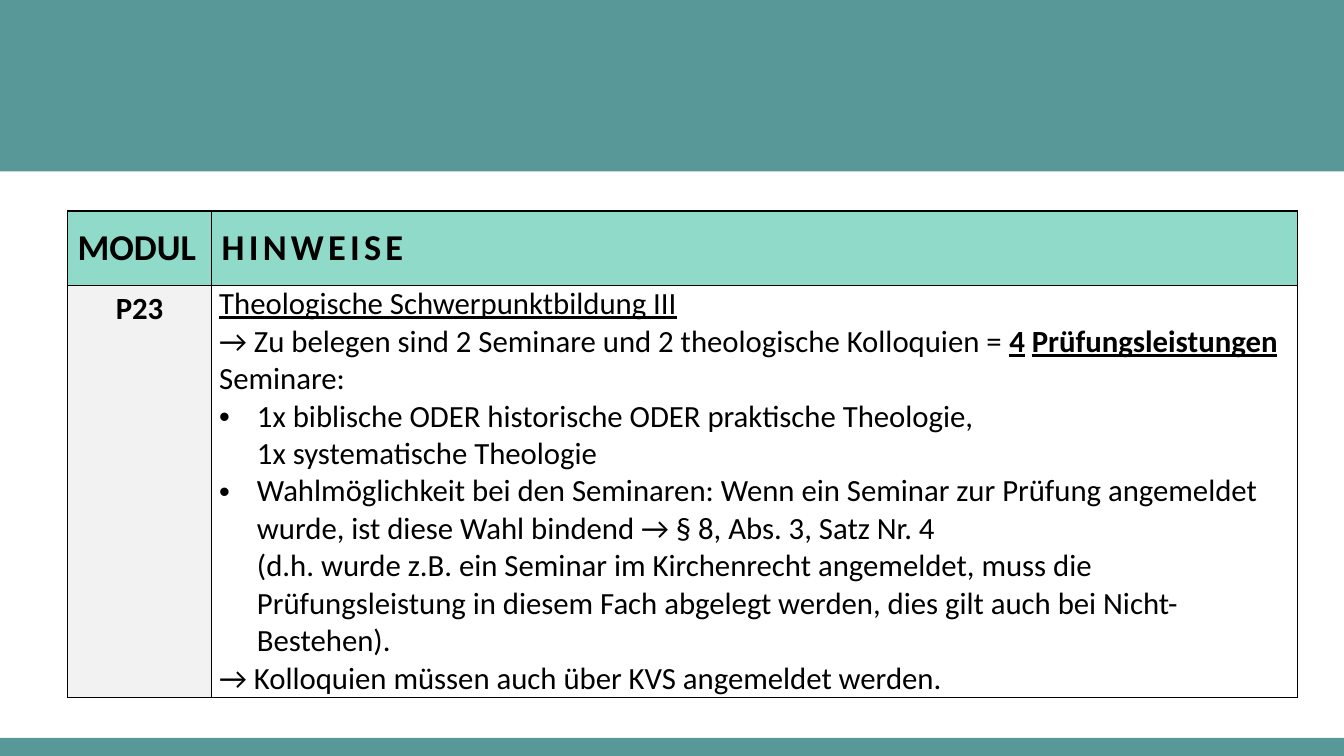
"""Build the slide with the notes on module P23."""
from dataclasses import dataclass

import lxml.etree
import pptx
import pptx.dml.color
import pptx.enum.shapes
import pptx.enum.text
import pptx.oxml.ns
import pptx.util

Pt = pptx.util.Pt
qn = pptx.oxml.ns.qn
MIDDLE = pptx.enum.text.MSO_ANCHOR.MIDDLE
TOP = pptx.enum.text.MSO_ANCHOR.TOP
SLIDE_WIDTH, SLIDE_HEIGHT = 960, 540
TEAL, MINT, GREY, WHITE, BLACK = "589898", "8FDAC8", "F2F2F2", "FFFFFF", "000000"
INDENT = 27


@dataclass
class Band:
    top: float
    height: float


@dataclass
class Run:
    text: str
    bold: bool = False
    underline: bool = False
    spacing: float = 0


@dataclass
class Paragraph:
    runs: list[Run]
    bullet: bool = False
    centered: bool = False


@dataclass
class Cell:
    fill: str
    paragraphs: list[Paragraph]
    size: float = 22
    anchor: pptx.enum.text.MSO_ANCHOR = TOP
    side_margin: float = 7.2
    end_margin: float = 3.6


BANDS = [Band(0, 122.4), Band(527.1, 12.9)]
COLUMN_WIDTHS = [103, 775.8]
ROW_HEIGHTS = [53.2, 294.5]
NOTES = [
    Paragraph([Run("Theologische Schwerpunktbildung III", underline=True)]),
    Paragraph([
        Run("→ Zu belegen sind 2 Seminare und 2 theologische Kolloquien = "),
        Run("4", bold=True, underline=True),
        Run(" "),
        Run("Prüfungsleistungen", bold=True, underline=True),
    ]),
    Paragraph([Run("Seminare:")]),
    Paragraph([Run("1x biblische ODER historische ODER praktische Theologie,\n"
                   "1x systematische Theologie")], bullet=True),
    Paragraph([Run("Wahlmöglichkeit bei den Seminaren: Wenn ein Seminar zur Prüfung "
                   "angemeldet wurde, ist diese Wahl bindend → § 8, Abs. 3, Satz Nr. 4\n"
                   "(d.h. wurde z.B. ein Seminar im Kirchenrecht angemeldet, muss die "
                   "Prüfungsleistung in diesem Fach abgelegt werden, dies gilt auch bei "
                   "Nicht-Bestehen).")], bullet=True),
    Paragraph([Run("→ Kolloquien müssen auch über KVS angemeldet werden.")]),
]
ROWS = [
    [Cell(MINT, [Paragraph([Run("MODUL", bold=True)])], 26, MIDDLE),
     Cell(MINT, [Paragraph([Run("HINWEISE", bold=True, spacing=3)])], 26, MIDDLE)],
    [Cell(GREY, [Paragraph([Run("P23", bold=True)], centered=True)]),
     Cell(WHITE, NOTES, side_margin=5.4, end_margin=0)],
]


def color(value: str) -> pptx.dml.color.RGBColor:
    """Turn a hex string into a colour."""
    return pptx.dml.color.RGBColor.from_string(value)


def draw_band(slide, band: Band) -> None:
    """Draw a full-width band."""
    shape = slide.shapes.add_shape(pptx.enum.shapes.MSO_SHAPE.RECTANGLE,
                                   0, Pt(band.top), Pt(SLIDE_WIDTH), Pt(band.height))
    shape.shadow.inherit = False
    shape.fill.solid()
    shape.fill.fore_color.rgb = color(TEAL)
    shape.line.fill.background()


def add_borders(table_cell) -> None:
    """Give a cell thin black lines on its four sides."""
    properties = table_cell._tc.get_or_add_tcPr()
    for side in ("lnL", "lnR", "lnT", "lnB"):
        line = lxml.etree.SubElement(properties, qn(f"a:{side}"), w=str(Pt(1)))
        fill = lxml.etree.SubElement(line, qn("a:solidFill"))
        lxml.etree.SubElement(fill, qn("a:srgbClr"), val=BLACK)


def add_bullet(paragraph) -> None:
    """Give a paragraph a hanging bullet."""
    properties = paragraph._p.get_or_add_pPr()
    properties.set("marL", str(Pt(INDENT)))
    properties.set("indent", str(-Pt(INDENT)))
    lxml.etree.SubElement(properties, qn("a:buFont"), typeface="Arial")
    lxml.etree.SubElement(properties, qn("a:buChar"), char="•")


def add_run(paragraph, content: Run, size: float) -> None:
    """Add a run, with a line break at each newline."""
    for index, line in enumerate(content.text.split("\n")):
        if index:
            paragraph.add_line_break()
        run = paragraph.add_run()
        run.text = line
        run.font.name = "Calibri"
        run.font.size = Pt(size)
        run.font.bold = content.bold
        run.font.underline = content.underline
        run.font.color.rgb = color(BLACK)
        if content.spacing:
            run._r.get_or_add_rPr().set("spc", str(round(content.spacing * 100)))


def fill_cell(table_cell, cell: Cell) -> None:
    """Write and format one table cell."""
    add_borders(table_cell)
    table_cell.fill.solid()
    table_cell.fill.fore_color.rgb = color(cell.fill)
    table_cell.vertical_anchor = cell.anchor
    table_cell.margin_left = table_cell.margin_right = Pt(cell.side_margin)
    table_cell.margin_top = table_cell.margin_bottom = Pt(cell.end_margin)
    frame = table_cell.text_frame
    for index, content in enumerate(cell.paragraphs):
        paragraph = frame.add_paragraph() if index else frame.paragraphs[0]
        if content.bullet:
            add_bullet(paragraph)
        if content.centered:
            paragraph.alignment = pptx.enum.text.PP_ALIGN.CENTER
        for run in content.runs:
            add_run(paragraph, run, cell.size)


def draw_table(slide) -> None:
    """Draw the module table."""
    table = slide.shapes.add_table(len(ROWS), len(COLUMN_WIDTHS), Pt(48.2), Pt(150.7),
                                   Pt(sum(COLUMN_WIDTHS)), Pt(sum(ROW_HEIGHTS))).table
    table.first_row = table.horz_banding = False
    for column, width in zip(table.columns, COLUMN_WIDTHS):
        column.width = Pt(width)
    for row, height, cells in zip(table.rows, ROW_HEIGHTS, ROWS):
        row.height = Pt(height)
        for table_cell, cell in zip(row.cells, cells):
            fill_cell(table_cell, cell)


def main() -> None:
    """Build and save the presentation."""
    presentation = pptx.Presentation()
    presentation.slide_width = Pt(SLIDE_WIDTH)
    presentation.slide_height = Pt(SLIDE_HEIGHT)
    slide = presentation.slides.add_slide(presentation.slide_layouts[6])
    for band in BANDS:
        draw_band(slide, band)
    draw_table(slide)
    presentation.save("out.pptx")


if __name__ == "__main__":
    main()
